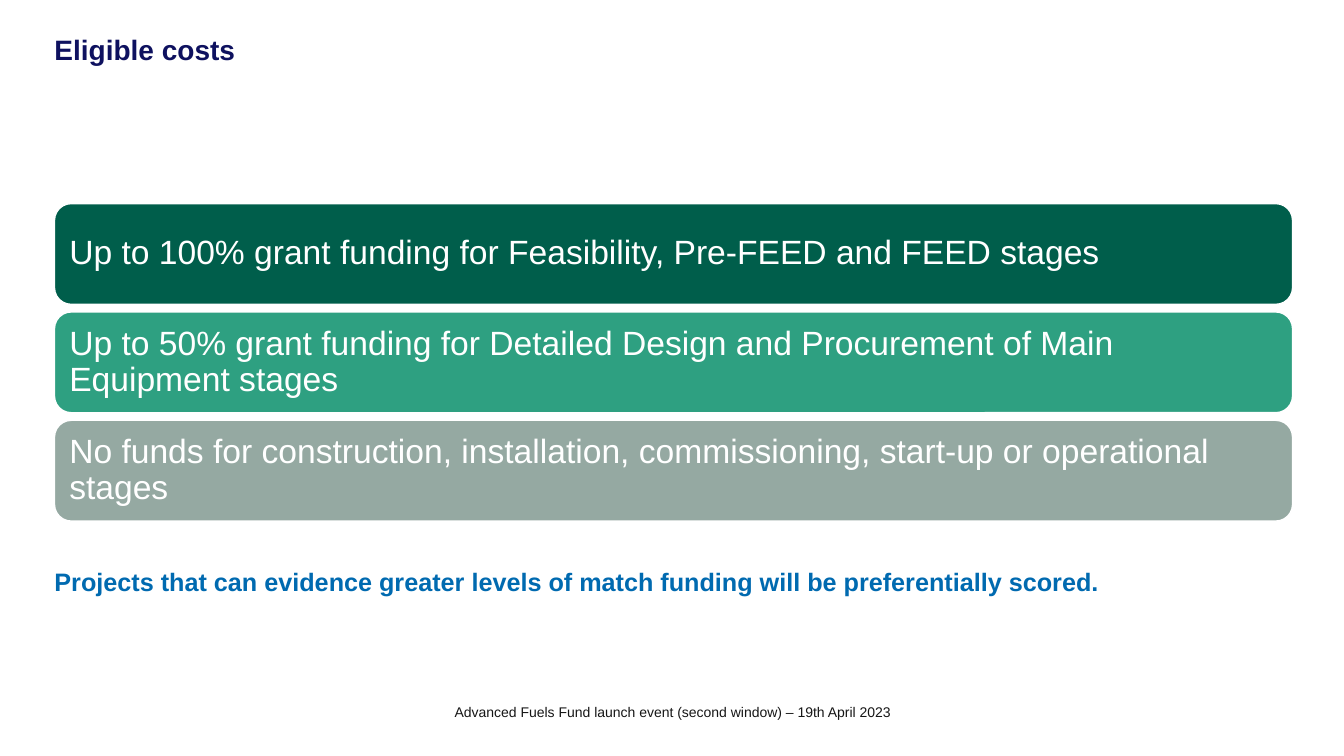
from dataclasses import dataclass

from pptx import Presentation
from pptx.dml.color import RGBColor
from pptx.enum.shapes import MSO_SHAPE
from pptx.enum.text import MSO_ANCHOR, MSO_AUTO_SIZE, PP_ALIGN
from pptx.shapes.autoshape import Shape
from pptx.slide import Slide
from pptx.util import Inches, Pt

ROUNDED_RECTANGLE = MSO_SHAPE.ROUNDED_RECTANGLE
TOP, MIDDLE = MSO_ANCHOR.TOP, MSO_ANCHOR.MIDDLE
LEFT, CENTER = PP_ALIGN.LEFT, PP_ALIGN.CENTER
NO_AUTOFIT = MSO_AUTO_SIZE.NONE

FONT = "Arial"
NAVY = RGBColor(0x0E, 0x11, 0x5F)
DARK_GREEN = RGBColor(0x00, 0x5E, 0x4B)
GREEN = RGBColor(0x2E, 0xA0, 0x81)
GREY_GREEN = RGBColor(0x95, 0xA9, 0xA2)
BLUE = RGBColor(0x00, 0x6A, 0xB0)
BLACK = RGBColor(0x16, 0x16, 0x16)
WHITE = RGBColor(0xFF, 0xFF, 0xFF)

MARGIN = 0.54
CONTENT_WIDTH = 12.28
BAND_TOP = 2.02
BAND_HEIGHT = 1.0
BAND_PITCH = 1.075


@dataclass(frozen=True)
class FundingBand:
    text: str
    color: RGBColor


@dataclass(frozen=True)
class TextStyle:
    size: float
    color: RGBColor
    bold: bool = False
    alignment: PP_ALIGN = LEFT
    anchor: MSO_ANCHOR = TOP
    inset_x: float = 0
    inset_y: float = 0
    line_spacing: float = 1.0
    space_after: float = 0


TITLE_STYLE = TextStyle(20, NAVY, bold=True, line_spacing=0.9)
BAND_STYLE = TextStyle(24, WHITE, anchor=MIDDLE, inset_x=0.1, inset_y=0.1,
                       line_spacing=0.9, space_after=8.4)
NOTE_STYLE = TextStyle(18, BLUE, bold=True, space_after=6)
FOOTER_STYLE = TextStyle(10, BLACK, alignment=CENTER, inset_x=0.1, inset_y=0.05)

FUNDING_BANDS = [
    FundingBand("Up to 100% grant funding for Feasibility, Pre-FEED and FEED stages", DARK_GREEN),
    FundingBand("Up to 50% grant funding for Detailed Design and Procurement of Main "
                "Equipment stages", GREEN),
    FundingBand("No funds for construction, installation, commissioning, start-up or "
                "operational stages", GREY_GREEN),
]


def write_text(shape: Shape, text: str, style: TextStyle) -> None:
    text_frame = shape.text_frame
    text_frame.text = text
    text_frame.word_wrap = True
    text_frame.auto_size = NO_AUTOFIT
    text_frame.vertical_anchor = style.anchor
    text_frame.margin_left = text_frame.margin_right = Inches(style.inset_x)
    text_frame.margin_top = text_frame.margin_bottom = Inches(style.inset_y)
    paragraph = text_frame.paragraphs[0]
    paragraph.alignment = style.alignment
    paragraph.line_spacing = style.line_spacing
    paragraph.space_after = Pt(style.space_after)
    font = paragraph.runs[0].font
    font.name = FONT
    font.size = Pt(style.size)
    font.bold = style.bold
    font.color.rgb = style.color


def add_title(slide: Slide, text: str) -> None:
    title = slide.shapes.title
    title.left, title.top = Inches(MARGIN), Inches(0.36)
    title.width, title.height = Inches(12.27), Inches(1.37)
    write_text(title, text, TITLE_STYLE)


def add_band(slide: Slide, band: FundingBand, top: float) -> None:
    shape = slide.shapes.add_shape(ROUNDED_RECTANGLE, Inches(MARGIN), Inches(top),
                                   Inches(CONTENT_WIDTH), Inches(BAND_HEIGHT))
    shape.shadow.inherit = False
    shape.fill.solid()
    shape.fill.fore_color.rgb = band.color
    shape.line.color.rgb = WHITE
    shape.line.width = Pt(1)
    write_text(shape, band.text, BAND_STYLE)


def add_label(slide: Slide, text: str, left: float, top: float, width: float,
              height: float, style: TextStyle) -> None:
    label = slide.shapes.add_textbox(Inches(left), Inches(top), Inches(width), Inches(height))
    write_text(label, text, style)


def main() -> None:
    presentation = Presentation()
    presentation.slide_width = Inches(13.33)
    presentation.slide_height = Inches(7.5)
    slide = presentation.slides.add_slide(presentation.slide_layouts.get_by_name("Title Only"))
    add_title(slide, "Eligible costs")
    for index, band in enumerate(FUNDING_BANDS):
        add_band(slide, band, BAND_TOP + index * BAND_PITCH)
    add_label(slide, "Advanced Fuels Fund launch event (second window) – 19th April 2023",
              3.88, 6.93, 5.58, 0.2, FOOTER_STYLE)
    add_label(slide, "Projects that can evidence greater levels of match funding will be "
              "preferentially scored.", MARGIN, 5.62, CONTENT_WIDTH, 0.65, NOTE_STYLE)
    presentation.save("out.pptx")


if __name__ == "__main__":
    main()
